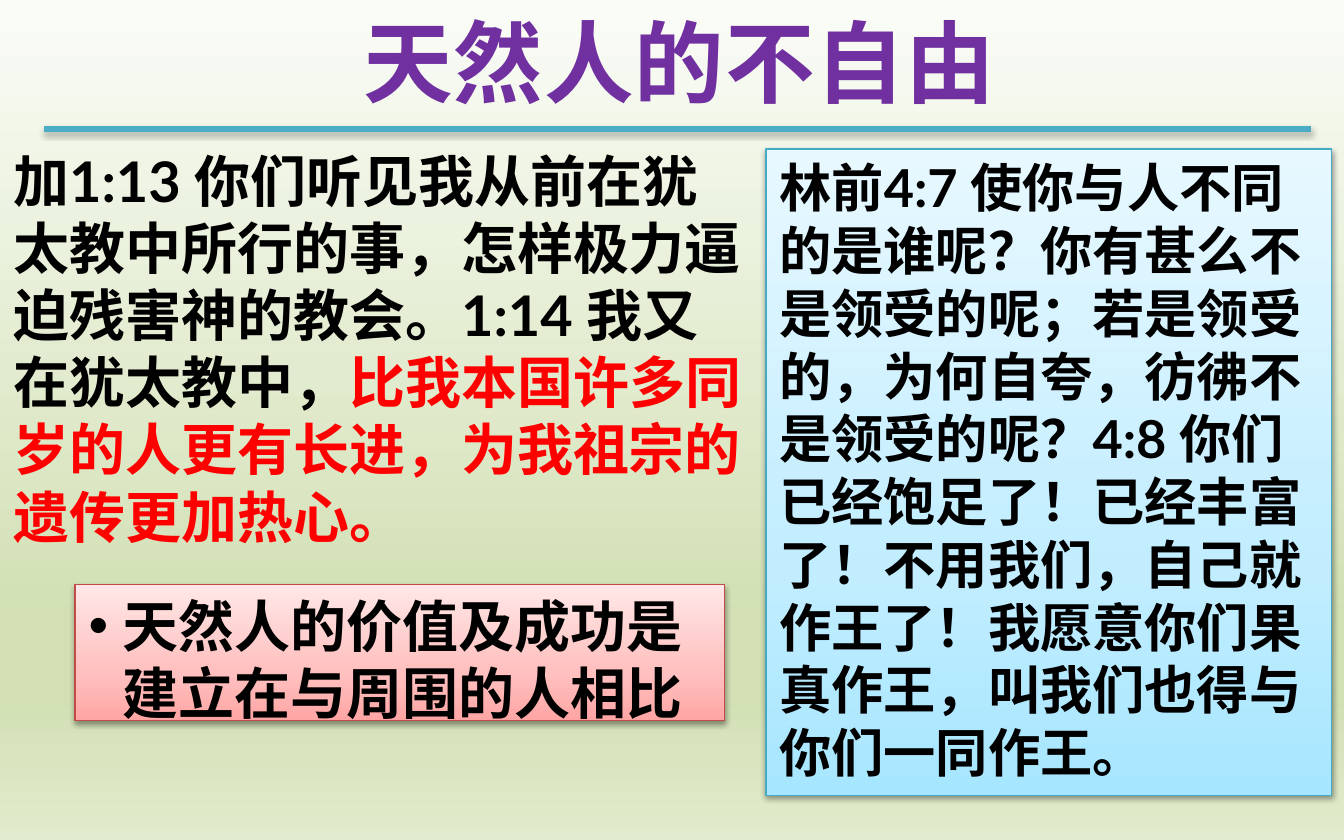
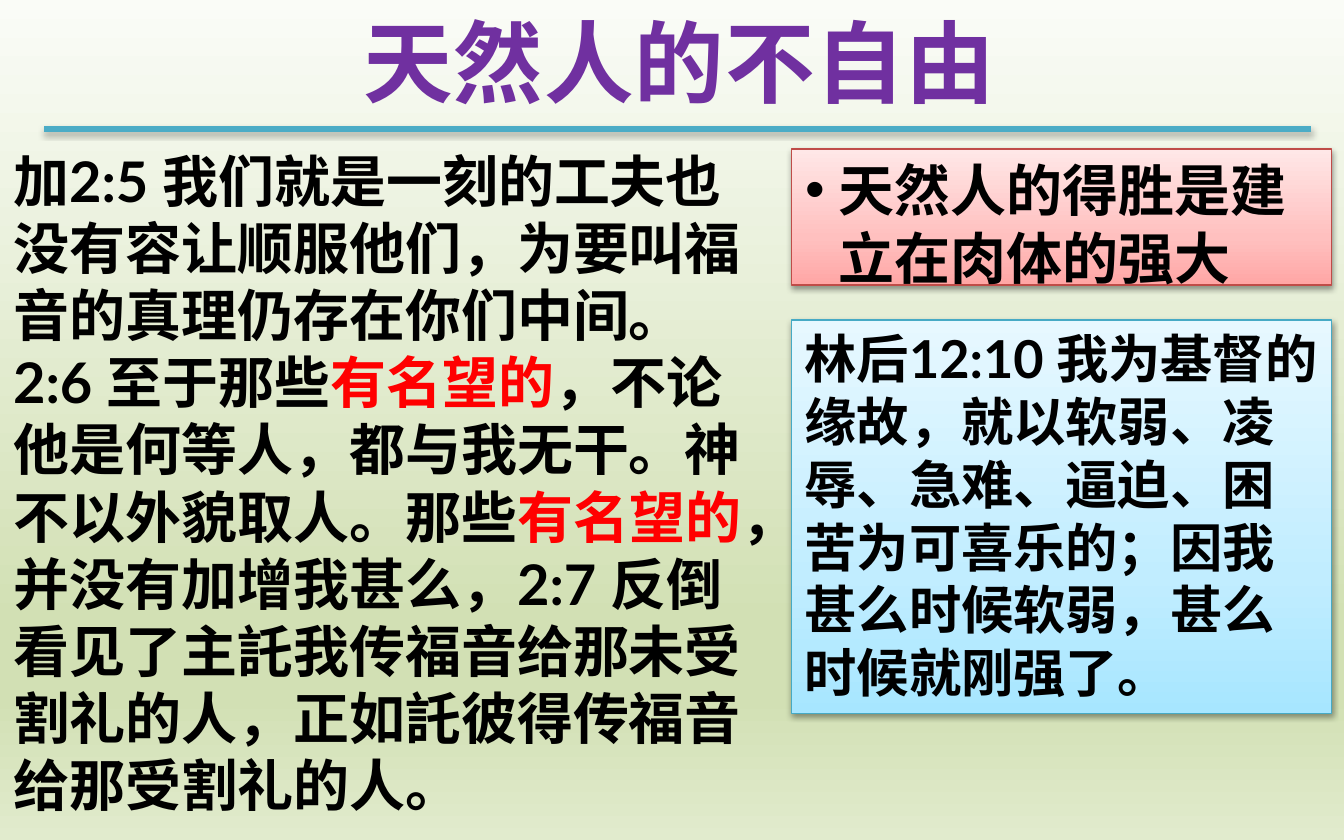
from dataclasses import dataclass

from lxml import etree
from pptx import Presentation
from pptx import util as u
from pptx.dml.color import RGBColor
from pptx.enum import shapes, text
from pptx.oxml.ns import qn

# Shared look
LATIN, CJK = "Lato", "Noto Sans CJK SC"
BLACK, RED, PURPLE, TEAL = "000000", "FF0000", "7030A0", "4BACC6"
BACKDROP = [(0, "FAFCF7"), (74, "D2E0B4"), (83, "D2E0B4"), (100, "E1EBCD")]
HEADING = "天然人的不自由"


@dataclass(frozen=True)
class Box:
    left: float
    top: float
    width: float
    height: float


@dataclass(frozen=True)
class Run:
    words: str
    color: str = BLACK


@dataclass(frozen=True)
class Panel:
    stops: list[tuple[int, str]]
    border: str


@dataclass(frozen=True)
class Page:
    verse_box: Box
    verse: list[Run]
    point_box: Box
    point: str
    quote_box: Box
    quote: str


PINK = Panel([(0, "FFA6A5"), (35, "FFC0BF"), (100, "FFE7E7")], "BF4C48")
BLUE = Panel([(0, "A7E6FF"), (35, "C1EDFF"), (100, "E7F8FF")], "46AAC5")
HEADING_BOX = Box(6.55, 0, 12.6, 2.31)

PAGES = [
    Page(
        Box(0, 2.64, 14.48, 7.95),
        [Run("加1:13 你们听见我从前在犹太教中所行的事，怎样极力逼迫残害神的教会。1:14 我又在犹太教中，"),
         Run("比我本国许多同岁的人更有长进，为我祖宗的遗传更加热心。", RED)],
        Box(1.42, 11.05, 12.27, 2.82),
        "天然人的价值及成功是建立在与周围的人相比",
        Box(14.48, 2.82, 10.69, 12.22),
        "林前4:7 使你与人不同的是谁呢？你有甚么不是领受的呢；若是领受的，为何自夸，彷彿不是领受的呢？"
        "4:8 你们已经饱足了！已经丰富了！不用我们，自己就作王了！我愿意你们果真作王，叫我们也得与你们一同作王。",
    ),
    Page(
        Box(0, 2.64, 14.48, 13.08),
        [Run("加2:5 我们就是一刻的工夫也没有容让顺服他们，为要叫福音的真理仍存在你们中间。2:6 至于那些"),
         Run("有名望的", RED),
         Run("，不论他是何等人，都与我无干。神不以外貌取人。那些"),
         Run("有名望的", RED),
         Run("，并没有加增我甚么，2:7 反倒看见了主託我传福音给那未受割礼的人，正如託彼得传福音给那受割礼的人。")],
        Box(14.96, 2.82, 10.21, 2.82),
        "天然人的得胜是建立在肉体的强大",
        Box(14.96, 6.05, 10.21, 7.44),
        "林后12:10 我为基督的缘故，就以软弱、凌辱、急难、逼迫、困苦为可喜乐的；因我甚么时候软弱，甚么时候就刚强了。",
    ),
]


def rgb(color: str) -> RGBColor:
    return RGBColor.from_string(color)


def lengths(box: Box) -> list[u.Length]:
    return [u.Cm(side) for side in (box.left, box.top, box.width, box.height)]


def place(shape, box: Box) -> None:
    shape.left, shape.top, shape.width, shape.height = lengths(box)


def sub(parent, tag: str, **attributes):
    return etree.SubElement(parent, qn(tag), {k: str(v) for k, v in attributes.items()})


def set_gradient(fill, owner, stops: list[tuple[int, str]], angle: int) -> None:
    """Gradient with any number of stops; the angle runs clockwise."""
    fill.gradient()
    gradient = owner.find(".//" + qn("a:gradFill"))
    for child in list(gradient):
        gradient.remove(child)
    stop_list = sub(gradient, "a:gsLst")
    for position, color in stops:
        sub(sub(stop_list, "a:gs", pos=position * 1000), "a:srgbClr", val=color)
    sub(gradient, "a:lin", ang=angle * 60000, scaled=0)


def drop_shadow(shape, distance: float, opacity: int) -> None:
    effects = sub(shape.element.spPr, "a:effectLst")
    shadow = sub(effects, "a:outerShdw", blurRad=u.Pt(3.1), dist=u.Pt(distance),
                 dir=90 * 60000, rotWithShape=0)
    sub(sub(shadow, "a:srgbClr", val=BLACK), "a:alpha", val=opacity * 1000)


def write(shape, runs: list[Run], size: float, font: str = LATIN,
          align=text.PP_ALIGN.LEFT, wrap: bool = True, spacing: float = 0):
    frame = shape.text_frame
    frame.word_wrap = wrap
    frame.auto_size = text.MSO_AUTO_SIZE.SHAPE_TO_FIT_TEXT
    frame.vertical_anchor = text.MSO_ANCHOR.TOP
    paragraph = frame.paragraphs[0]
    paragraph.alignment = align
    paragraph.space_before = u.Pt(0)
    for part in runs:
        run = paragraph.add_run()
        run.text = part.words
        run.font.name, run.font.size, run.font.bold = font, u.Pt(size), True
        run.font.color.rgb = rgb(part.color)
        properties = run.font._element
        properties.set("lang", "zh-CN")
        if spacing:
            properties.set("spc", str(int(spacing * 100)))
        sub(properties, "a:ea", typeface=CJK)
    return paragraph


def add_bullet(paragraph) -> None:
    properties = paragraph._p.get_or_add_pPr()
    indent = u.Cm(0.64)
    properties.set("marL", str(indent))
    properties.set("indent", str(-indent))
    sub(properties, "a:buFont", typeface="Arial")
    sub(properties, "a:buChar", char="•")


def style_panel(shape, panel: Panel) -> None:
    set_gradient(shape.fill, shape.element, panel.stops, 270)
    shape.line.color.rgb = rgb(panel.border)
    shape.line.width = u.Pt(0.75)
    drop_shadow(shape, 1.6, 38)


def add_rule(slide) -> None:
    rule = slide.shapes.add_connector(
        shapes.MSO_CONNECTOR.STRAIGHT, u.Cm(0.84), u.Cm(2.44), u.Cm(24.77), u.Cm(2.44))
    rule.line.color.rgb = rgb(TEAL)
    rule.line.width = u.Pt(3)
    drop_shadow(rule, 1.8, 35)


def add_page(prs, page: Page) -> None:
    slide = prs.slides.add_slide(prs.slide_layouts[1])

    # Heading and rule
    heading = slide.shapes.title
    place(heading, HEADING_BOX)
    write(heading, [Run(HEADING, PURPLE)], 48, CJK, text.PP_ALIGN.CENTER, False, 0.5)
    add_rule(slide)

    # Main verse
    verse = slide.shapes.add_textbox(*lengths(page.verse_box))
    write(verse, page.verse, 30)

    # Bulleted point
    point = slide.placeholders[1]
    place(point, page.point_box)
    style_panel(point, PINK)
    add_bullet(write(point, [Run(page.point)], 30))

    # Supporting verse
    quote = slide.shapes.add_shape(shapes.MSO_SHAPE.RECTANGLE, *lengths(page.quote_box))
    style_panel(quote, BLUE)
    write(quote, [Run(page.quote)], 28)


def main() -> None:
    prs = Presentation()
    prs.slide_width, prs.slide_height = u.Cm(25.4), u.Cm(15.88)
    master = prs.slide_master
    set_gradient(master.background.fill, master.element, BACKDROP, 90)
    for page in PAGES:
        add_page(prs, page)
    prs.save("out.pptx")


if __name__ == "__main__":
    main()
